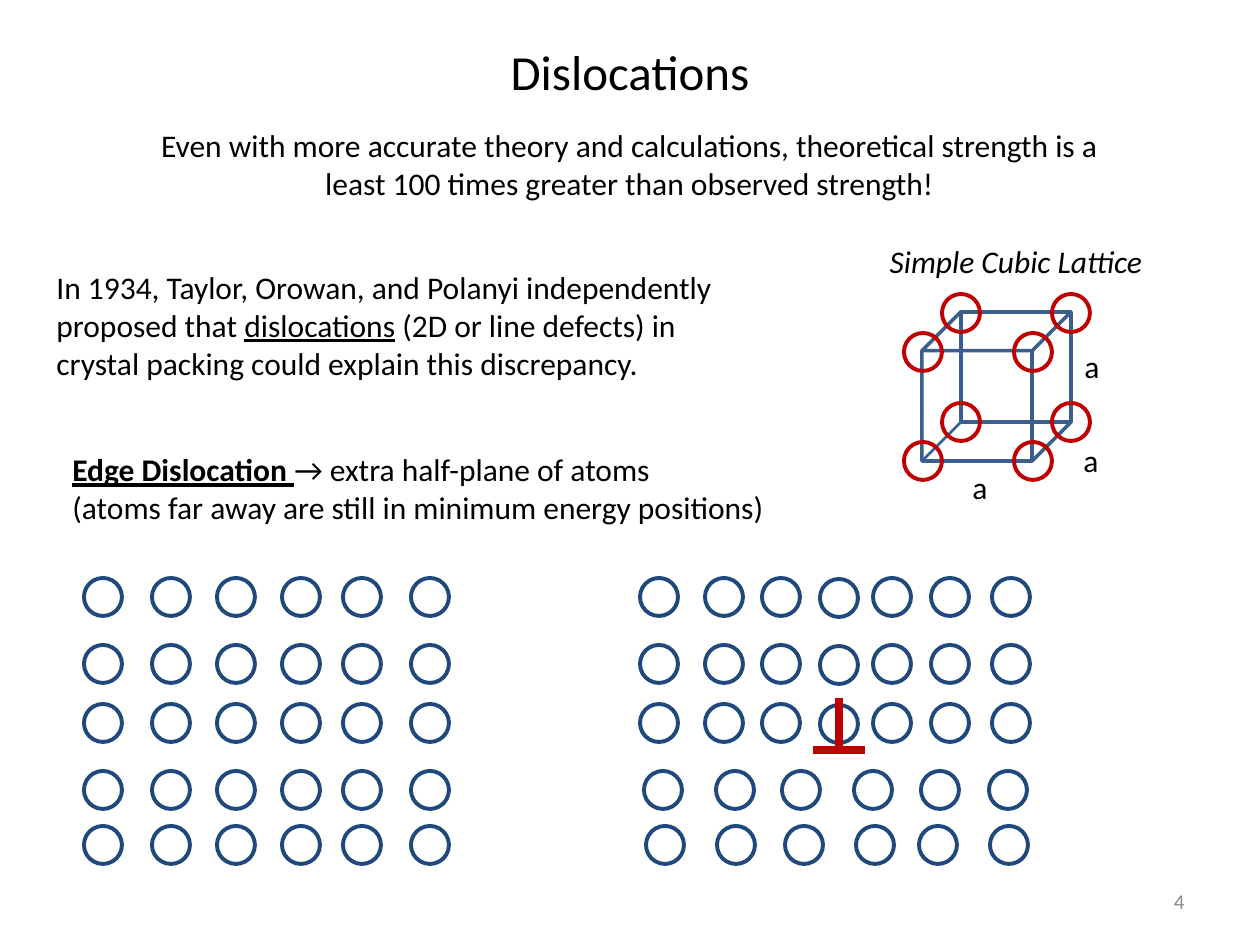
from itertools import product

from lxml.etree import SubElement
from pptx import Presentation
from pptx.dml.color import RGBColor as Rgb
from pptx.enum.shapes import MSO_CONNECTOR as Conn, MSO_SHAPE as Kind
from pptx.enum.text import MSO_ANCHOR as Anchor, MSO_AUTO_SIZE as Fit, PP_ALIGN as Align
from pptx.oxml.ns import qn
from pptx.util import Emu, Pt

SCALE = 914400 / 126
FONT = "Calibri"
HUES = {"ink": "000000", "gray": "8C8C8C", "cube": "3A5F8C",
        "edge": "376092", "atom": "1F497D", "red": "C00000"}


def px(*nums):
    """Turn px lengths into EMU."""
    return [Emu(round(n * SCALE)) for n in nums]


def hue(name):
    """Look up a colour by name."""
    return Rgb.from_string(HUES[name])


def write(box, paras, size=18, align=Align.LEFT, color="ink", anchor=Anchor.TOP):
    """Fill a text shape with paragraphs of (text, style) runs."""
    frame = box.text_frame
    frame.word_wrap = True
    frame.auto_size = Fit.NONE
    frame.vertical_anchor = anchor
    for i, runs in enumerate(paras):
        para = frame.add_paragraph() if i else frame.paragraphs[0]
        para.alignment = align
        for text, style in runs:
            run = para.add_run()
            run.text = text
            font = run.font
            font.name, font.size = FONT, Pt(size)
            font.color.rgb = hue(color)
            font.bold = "b" in style
            font.italic = "i" in style
            font.underline = "u" in style


def add_text(tree, area, paras, **look):
    """Add a text box."""
    write(tree.add_textbox(*px(*area)), paras, **look)


def add_form(tree, kind, area, color, width):
    """Add an outlined shape without fill."""
    form = tree.add_shape(kind, *px(*area))
    form.shadow.inherit = False
    form.fill.background()
    form.line.color.rgb = hue(color)
    form.line.width = Pt(width)
    return form


def add_line(tree, ends, color, width):
    """Add a straight line."""
    line = tree.add_connector(Conn.STRAIGHT, *px(*ends))
    line.line.color.rgb = hue(color)
    line.line.width = Pt(width)
    SubElement(line._element.spPr, qn("a:effectLst"))


def add_atoms(tree, cols, rows, color="atom"):
    """Add a circle at each crossing of columns and rows."""
    for top, left in product(rows, cols):
        add_form(tree, Kind.OVAL, (left, top, 38, 38), color, 2.25)


def add_cube(tree):
    """Draw the unit cell with its corner atoms and labels."""
    group = tree.add_group_shape().shapes
    cube = add_form(group, Kind.CUBE, (922, 312, 149, 149), "cube", 2)
    cube.adjustments[0] = 0.26
    add_form(group, Kind.RECTANGLE, (961, 312, 110, 110), "cube", 2)
    add_line(group, (922, 461, 961, 422), "edge", 1.5)
    add_text(tree, (847, 236, 338, 50), [[("Simple Cubic Lattice", "i")]],
             align=Align.CENTER)
    add_atoms(tree, (942, 1052), (294, 403), "red")
    add_atoms(tree, (904, 1014), (333, 442), "red")
    for left, top in ((960, 462), (1071, 435), (1072, 341)):
        add_text(tree, (left, top, 54, 52), [[("a", "")]])


def add_mark(tree):
    """Draw the edge dislocation symbol."""
    group = tree.add_group_shape().shapes
    add_line(group, (839, 698, 839, 748), "red", 4.5)
    add_line(group, (813, 750, 865, 750), "red", 4.5)


def main():
    """Build the slide."""
    deck = Presentation()
    deck.slide_width, deck.slide_height = px(1260, 945)
    slide = deck.slides.add_slide(deck.slide_layouts[5])
    tree = slide.shapes

    title = tree.title
    title.left, title.top, title.width, title.height = px(0, 35, 1260, 72)
    write(title, [[("Dislocations", "")]], size=28, align=Align.CENTER)
    add_text(tree, (142, 120, 975, 89), [[(
        "Even with more accurate theory and calculations, theoretical strength "
        "is a least 100 times greater than observed strength!", "")]],
        align=Align.CENTER)
    add_text(tree, (903, 876, 294, 50), [[("4", "")]], size=12,
             align=Align.RIGHT, color="gray", anchor=Anchor.MIDDLE)
    add_text(tree, (44, 262, 727, 127), [[
        ("In 1934, Taylor, Orowan, and Polanyi independently proposed that ", ""),
        ("dislocations", "u"),
        (" (2D or line defects) in crystal packing could explain this discrepancy.", "")]])
    add_cube(tree)
    add_text(tree, (60, 444, 779, 89), [
        [("Edge Dislocation ", "bu"), ("→ extra half-plane of atoms", "")],
        [("(atoms far away are still in minimum energy positions)", "")]])

    rows = (578, 645, 704, 771, 826)
    add_atoms(tree, (84, 152, 217, 282, 343, 411), rows)
    add_atoms(tree, (640, 705, 762, 873, 931, 992), rows[:3])
    add_atoms(tree, (644, 716, 782, 854, 921, 989), rows[3:4])
    add_atoms(tree, (646, 717, 785, 856, 919, 990), rows[4:])
    add_atoms(tree, (820,), [top + 1 for top in rows[:3]])
    add_mark(tree)
    deck.save("out.pptx")


if __name__ == "__main__":
    main()
